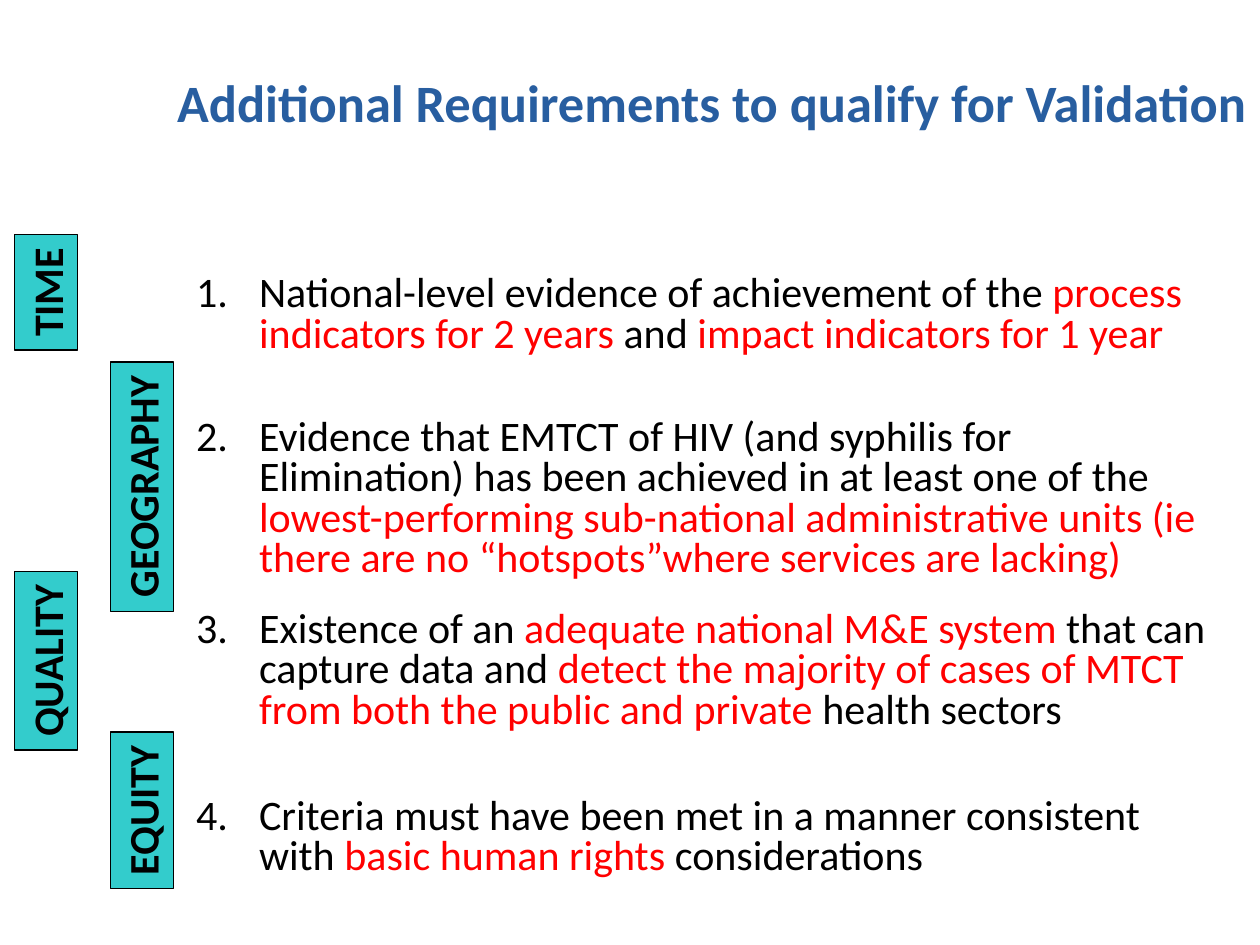
from dataclasses import dataclass

from lxml.etree import SubElement
from pptx import Presentation
from pptx.dml.color import RGBColor
from pptx.enum.shapes import MSO_SHAPE
from pptx.enum.text import MSO_ANCHOR, MSO_AUTO_SIZE, PP_ALIGN
from pptx.oxml.ns import qn
from pptx.util import Pt


@dataclass(frozen=True)
class Theme:
    font: str = "Calibri"
    head: str = "285EA0"
    ink: str = "000000"
    mark: str = "FF0000"
    tag: str = "33CCCC"
    head_size: int = 30
    size: int = 24


class Deck:
    def __init__(self, theme):
        self.theme = theme
        self.file = Presentation()
        self.file.slide_width, self.file.slide_height = Pt(720), Pt(540)
        self.slide = self.file.slides.add_slide(self.file.slide_layouts[5])

    def run(self, para, text, color, size, bold=False):
        run = para.add_run()
        run.text = text
        font = run.font
        font.name, font.size, font.bold = self.theme.font, Pt(size), bold
        font.color.rgb = RGBColor.from_string(color)

    def title(self, text, left, top, width, height):
        shape = self.slide.shapes.title
        shape.left, shape.top = Pt(left), Pt(top)
        shape.width, shape.height = Pt(width), Pt(height)
        frame = shape.text_frame
        frame.auto_size = MSO_AUTO_SIZE.NONE
        frame.vertical_anchor = MSO_ANCHOR.TOP
        para = frame.paragraphs[0]
        para.alignment = PP_ALIGN.RIGHT
        self.run(para, text, self.theme.head, self.theme.head_size, True)

    def tag(self, text, mid_x, mid_y, length, depth=36):
        """Add a label turned to read upwards, placed by its centre."""
        shape = self.slide.shapes.add_shape(
            MSO_SHAPE.RECTANGLE, Pt(mid_x - length / 2), Pt(mid_y - depth / 2),
            Pt(length), Pt(depth))
        shape.rotation = 270
        shape.shadow.inherit = False
        shape.fill.solid()
        shape.fill.fore_color.rgb = RGBColor.from_string(self.theme.tag)
        shape.line.color.rgb = RGBColor.from_string(self.theme.ink)
        shape.line.width = Pt(0.75)
        frame = shape.text_frame
        frame.word_wrap = False
        para = frame.paragraphs[0]
        para.alignment = PP_ALIGN.CENTER
        self.run(para, text, self.theme.ink, self.theme.size, True)

    def steps(self, items, left, top, width, height, inset):
        """Add a numbered list; each item is a gap above and its runs."""
        box = self.slide.shapes.add_textbox(
            Pt(left), Pt(top), Pt(width), Pt(height))
        frame = box.text_frame
        frame.word_wrap = True
        frame.margin_top = Pt(inset)
        for i, (gap, runs) in enumerate(items):
            para = frame.add_paragraph() if i else frame.paragraphs[0]
            para.line_spacing = 0.8
            para.space_before = Pt(gap)
            props = para._p.get_or_add_pPr()
            props.set("marL", str(Pt(36)))
            props.set("indent", str(Pt(-36)))
            SubElement(props, qn("a:buAutoNum"), type="arabicPeriod")
            for text, color in runs:
                self.run(para, text, color, self.theme.size)


def main():
    theme = Theme()
    ink, mark = theme.ink, theme.mark
    deck = Deck(theme)
    deck.steps([
        (0, [("National-level evidence of achievement of the ", ink),
             ("process indicators for 2 years ", mark),
             ("and ", ink),
             ("impact indicators for 1 year", mark)]),
        (36, [("Evidence that EMTCT of HIV (and syphilis for Elimination) "
               "has been achieved in at least one of the ", ink),
              ("lowest-performing sub-national administrative units (ie "
               "there are no “hotspots”where services are lacking)", mark)]),
        (17.5, [("Existence of an ", ink),
                ("adequate national M&E system", mark),
                (" that can capture data and ", ink),
                ("detect the majority of cases of MTCT from both the public "
                 "and private ", mark),
                ("health sectors", ink)]),
        (37.5, [("Criteria must have been met in a manner consistent with ", ink),
                ("basic human rights ", mark),
                ("considerations", ink)]),
    ], 105, 134, 595.5, 436, 23.5)

    columns = (26.5, 81)
    tags = [("TIME", 167, 66), ("GEOGRAPHY", 278, 142.5),
            ("QUALITY", 377.5, 102), ("EQUITY", 463, 89.5)]
    for i, (text, mid, length) in enumerate(tags):
        deck.tag(text, columns[i % 2], mid, length)

    deck.title("Additional Requirements to qualify for Validation",
               0, 36.5, 720, 97)
    deck.file.save("out.pptx")


if __name__ == "__main__":
    main()
